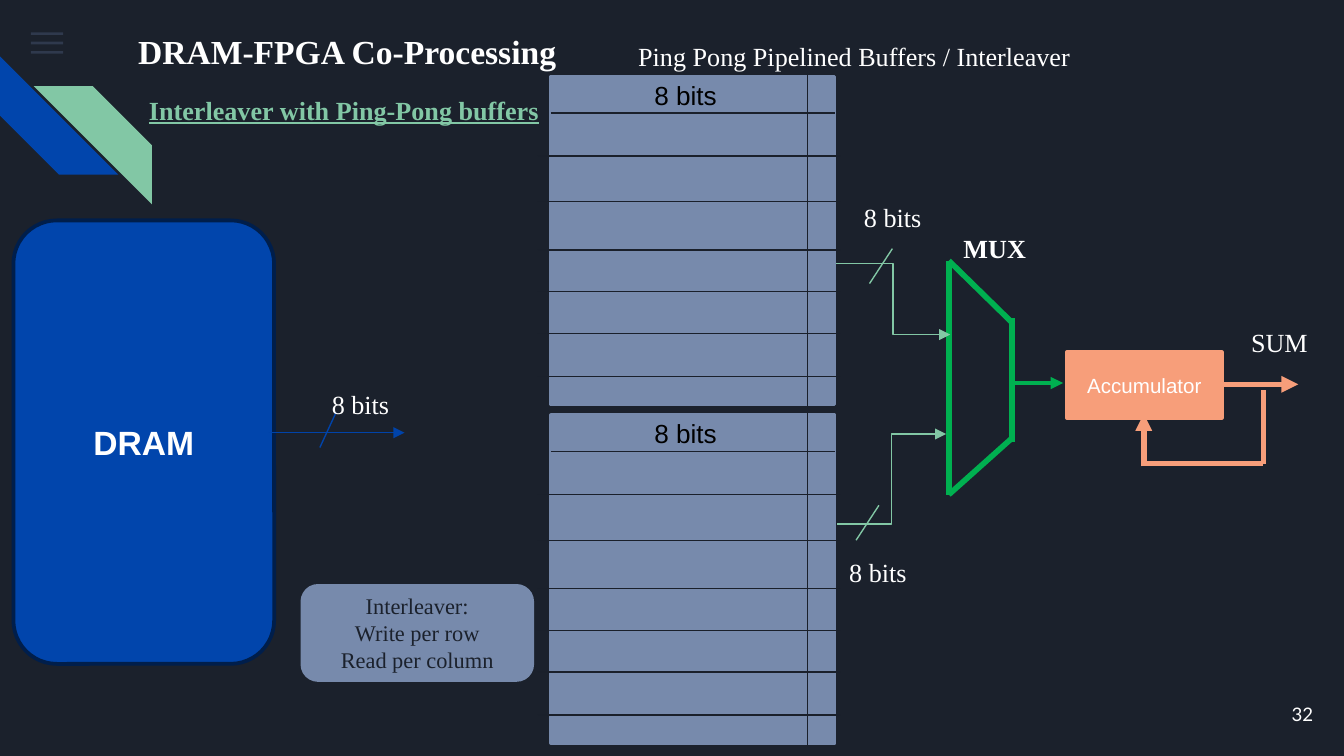
from dataclasses import dataclass

from lxml.etree import SubElement
from pptx import Presentation
from pptx.dml.color import RGBColor
from pptx.enum.shapes import MSO_CONNECTOR, MSO_SHAPE
from pptx.enum.text import MSO_ANCHOR, PP_ALIGN
from pptx.oxml.ns import qn
from pptx.util import Inches, Pt


@dataclass(frozen=True)
class Theme:
    """Colours, fonts and type sizes of the slide."""
    background: str = "1B212C"
    blue: str = "0145AC"
    arrow_blue: str = "0043A9"
    navy: str = "001E4B"
    mint: str = "82C7A5"
    green: str = "00B050"
    coral: str = "F79E7A"
    steel: str = "778AAC"
    menu: str = "55688B"
    rule: str = "1A202B"
    white: str = "FFFFFF"
    black: str = "000000"
    serif: str = "Times New Roman"
    sans: str = "Arial"
    number_font: str = "Lato"
    title: int = 18
    label: int = 14
    note: int = 12
    block: int = 11
    number: int = 10
    thin: float = 0.75
    border: float = 2
    medium: float = 2.25
    thick: float = 3


@dataclass(frozen=True)
class Box:
    """A region measured in grid cells of a tenth of an inch."""
    left: float
    top: float
    width: float
    height: float

    def inner(self, left, top, width, height):
        """Return a box placed relative to this one."""
        return Box(self.left + left, self.top + top, width, height)

    def point(self, column, row):
        """Return slide lengths of a point inside the box."""
        return cells(self.left + column), cells(self.top + row)

    def lengths(self):
        """Return the position and size as slide lengths."""
        return [cells(value) for value in (self.left, self.top, self.width, self.height)]


THEME = Theme()
COLUMNS, ROWS = 100, 56.25


def cells(count):
    """Convert grid cells to a length."""
    return Inches(count / 10)


def colour(value):
    """Convert a hexadecimal colour."""
    return RGBColor.from_string(value)


def write(shape, text, size=THEME.label, font=THEME.serif, color=THEME.white, bold=False,
          underline=False, align=PP_ALIGN.LEFT, anchor=MSO_ANCHOR.TOP, inset=0.05):
    """Write formatted text into a shape, one paragraph a line."""
    frame = shape.text_frame
    frame.word_wrap = True
    frame.vertical_anchor = anchor
    frame.margin_left = frame.margin_right = Inches(0.1)
    frame.margin_top = frame.margin_bottom = Inches(inset)
    frame.text = text
    for paragraph in frame.paragraphs:
        paragraph.alignment = align
        for run in paragraph.runs:
            run.font.size, run.font.name = Pt(size), font
            run.font.bold, run.font.underline = bold, underline
            run.font.color.rgb = colour(color)


def add_label(slide, box, text, **style):
    """Add a text box."""
    write(slide.shapes.add_textbox(*box.lengths()), text, **style)


def add_block(slide, kind, box, fill, line=None):
    """Add a filled preset shape."""
    shape = slide.shapes.add_shape(kind, *box.lengths())
    shape.shadow.inherit = False
    shape.fill.solid()
    shape.fill.fore_color.rgb = colour(fill)
    if line:
        shape.line.color.rgb = colour(line)
        shape.line.width = Pt(THEME.border)
    else:
        shape.line.fill.background()
    return shape


def add_line(slide, box, start, end, color, width=THEME.thin, arrow=False,
             kind=MSO_CONNECTOR.STRAIGHT):
    """Add a connector between two points of a box."""
    connector = slide.shapes.add_connector(kind, *box.point(*start), *box.point(*end))
    connector.line.color.rgb = colour(color)
    connector.line.width = Pt(width)
    if arrow:
        SubElement(connector.line._get_or_add_ln(), qn("a:tailEnd"), type="triangle")
    SubElement(connector._element.spPr, qn("a:effectLst"))


def draw_decoration(slide, box):
    """Draw the menu bars and the two corner stripes."""
    for index in range(3):
        bar = add_block(slide, MSO_SHAPE.RECTANGLE,
                        box.inner(2.3, 2.4 + 0.7 * index, 2.4, 0.2), THEME.menu)
        fill = bar._element.spPr.find(qn("a:solidFill"))
        SubElement(fill[0], qn("a:alpha"), val="35000")
    stripe = add_block(slide, MSO_SHAPE.DIAGONAL_STRIPE, box.inner(0, 4.2, 8.8, 8.8), THEME.blue)
    stripe.rotation = 270
    stripe = add_block(slide, MSO_SHAPE.DIAGONAL_STRIPE, box.inner(2.5, 6.4, 8.8, 8.8), THEME.mint)
    stripe._element.spPr.xfrm.set("flipH", "1")


def draw_headings(slide, box):
    """Write the title, subtitle, buffer heading and slide number."""
    add_label(slide, box.inner(9.3, 1.3, 77, 10), "DRAM-FPGA Co-Processing",
              size=THEME.title, bold=True, inset=0.1)
    add_label(slide, box.inner(10.1, 6.5, 50, 3.4), "Interleaver with Ping-Pong buffers",
              color=THEME.mint, bold=True, underline=True)
    add_label(slide, box.inner(46.5, 2.5, 36.3, 3.4), "Ping Pong Pipelined Buffers / Interleaver")
    add_label(slide, box.inner(92.7, 51, 6, 4.3), "32", size=THEME.number,
              font=THEME.number_font, align=PP_ALIGN.RIGHT, anchor=MSO_ANCHOR.MIDDLE, inset=0.1)


def draw_memory(slide, box):
    """Draw the DRAM block, its output bus and the interleaver note."""
    memory = add_block(slide, MSO_SHAPE.ROUNDED_RECTANGLE, box.inner(0, 0, 19.4, 33),
                       THEME.blue, THEME.navy)
    centred = dict(align=PP_ALIGN.CENTER, anchor=MSO_ANCHOR.MIDDLE)
    write(memory, "DRAM", size=THEME.title, font=THEME.sans, bold=True, **centred)
    add_line(slide, box, (19, 15.8), (29.1, 15.8), THEME.arrow_blue, arrow=True)
    add_line(slide, box, (22.8, 16.9), (24, 14.3), THEME.arrow_blue)
    add_label(slide, box.inner(22.7, 12, 9.1, 3.4), "8 bits")
    note = add_block(slide, MSO_SHAPE.ROUNDED_RECTANGLE, box.inner(21.5, 27.2, 17.1, 7),
                     THEME.steel, THEME.steel)
    write(note, "Interleaver:\nWrite per row\nRead per column", size=THEME.note,
          color=THEME.background, **centred)


def draw_buffer(slide, box):
    """Draw one ruled buffer with its width label."""
    add_block(slide, MSO_SHAPE.RECTANGLE, box, THEME.steel, THEME.steel)
    add_line(slide, box, (0, 2.7), (box.width, 2.7), THEME.rule)
    for row in (5.9, 9.3, 12.9, 16, 19.1, 22.3):
        add_line(slide, box, (-1, row), (box.width + 0.5, row), THEME.rule)
    add_line(slide, box, (19.1, -0.2), (19.1, box.height + 0.3), THEME.rule)
    add_label(slide, box.inner(6.7, -0.3, 13.9, 3.4), "8 bits", font=THEME.sans, color=THEME.black)


def draw_multiplexer(slide, box):
    """Draw the multiplexer outline, its two inputs and its output."""
    outline = (((0, 0), (0, 17.4)), ((0, 0), (4.7, 4.6)),
               ((0, 17.4), (4.7, 13.2)), ((4.7, 4.3), (4.7, 13.5)))
    for start, end in outline:
        add_line(slide, box, start, end, THEME.green, THEME.thick)
    add_label(slide, box.inner(0.1, -2.6, 13.4, 3.4), "MUX", bold=True)
    inputs = (((-8.4, 0.2), (0.1, 5.5), (-5.9, 1.7), (-7.3, -4.9)),
              ((-8.3, 19.6), (-0.2, 12.9), (-6.9, 20.8), (-8.4, 21.5)))
    for start, end, slash, label in inputs:
        add_line(slide, box, start, end, THEME.mint, arrow=True, kind=MSO_CONNECTOR.ELBOW)
        add_line(slide, box, slash, (slash[0] + 1.7, slash[1] - 2.6), THEME.mint)
        add_label(slide, box.inner(*label, 9.1, 3.4), "8 bits")
    add_line(slide, box, (4.7, 9.1), (8.5, 9.1), THEME.green, THEME.medium, arrow=True)


def draw_accumulator(slide, box):
    """Draw the accumulator, its output and its feedback loop."""
    block = add_block(slide, MSO_SHAPE.RECTANGLE, box, THEME.coral, THEME.coral)
    write(block, "Accumulator", size=THEME.block, font=THEME.sans,
          align=PP_ALIGN.CENTER, anchor=MSO_ANCHOR.MIDDLE)
    wires = (((11.6, 2.4), (17.2, 2.4), True), ((5.7, 8.5), (5.7, 4.6), True),
             ((5.7, 8.3), (14.6, 8.3), False), ((14.6, 8.3), (14.6, 2.8), False))
    for start, end, arrow in wires:
        add_line(slide, box, start, end, THEME.coral, THEME.thick, arrow)
    add_label(slide, box.inner(12.7, -2.4, 7.9, 3.4), "SUM")


def main():
    """Build and save the slide."""
    presentation = Presentation()
    presentation.slide_width, presentation.slide_height = cells(COLUMNS), cells(ROWS)
    slide = presentation.slides.add_slide(presentation.slide_layouts[6])
    slide.background.fill.solid()
    slide.background.fill.fore_color.rgb = colour(THEME.background)
    page = Box(0, 0, COLUMNS, ROWS)
    draw_decoration(slide, page)
    draw_headings(slide, page)
    draw_memory(slide, page.inner(1, 16.4, 38.6, 34.2))
    for index in range(2):
        draw_buffer(slide, page.inner(41, 5.7 + 25.2 * index, 21.1, 24.4))
    draw_multiplexer(slide, page.inner(70.6, 19.4, 4.7, 17.4))
    draw_accumulator(slide, page.inner(79.4, 26.2, 11.5, 4.9))
    presentation.save("out.pptx")


if __name__ == "__main__":
    main()
